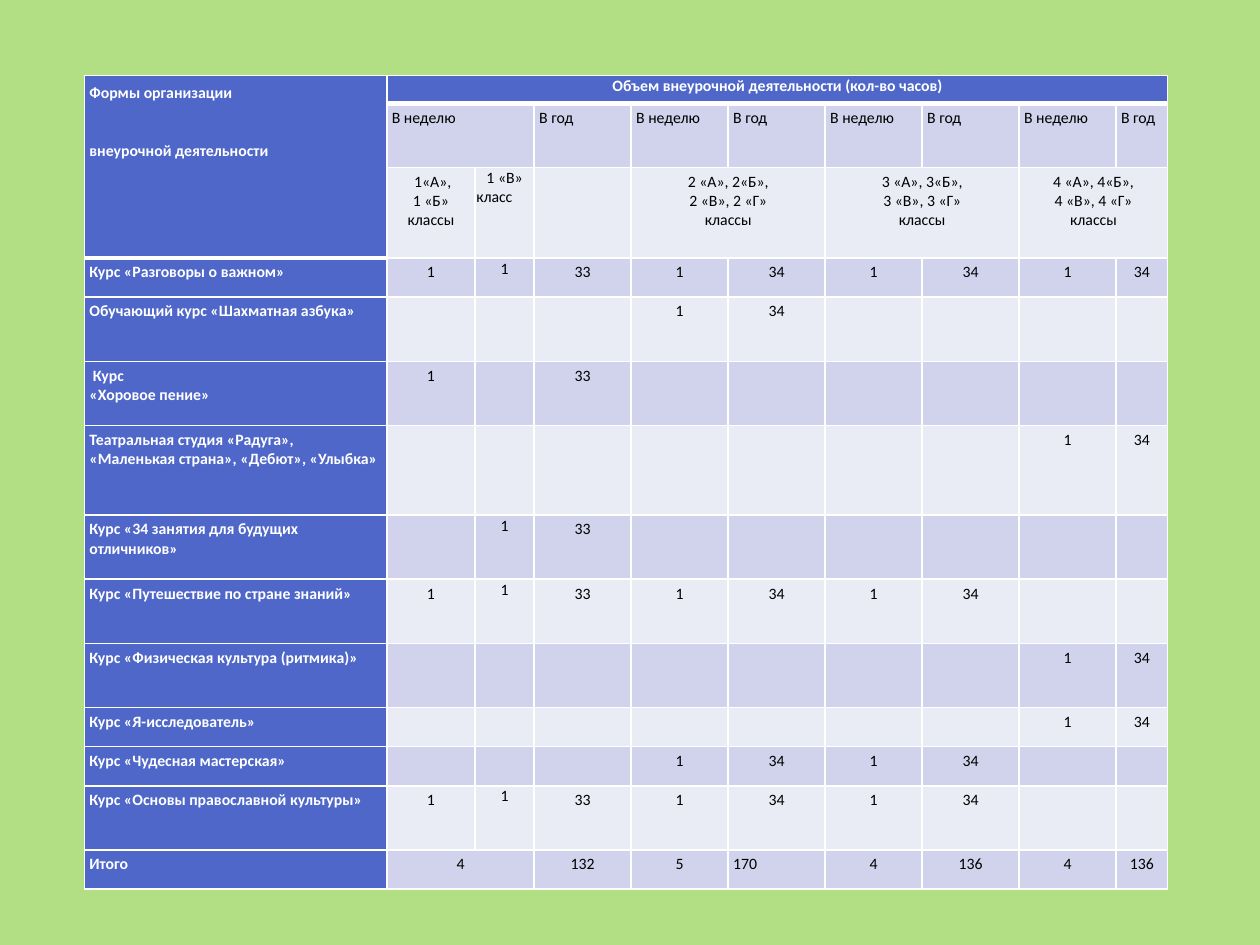
from lxml.etree import SubElement
from pptx import Presentation
from pptx.dml.color import RGBColor
from pptx.enum.text import MSO_ANCHOR, PP_ALIGN
from pptx.oxml.ns import qn
from pptx.util import Emu, Inches, Pt

COLORS = {
    "background": "92D050",
    "header": "4E67C8",
    "odd": "D0D3EB",
    "even": "E9EBF5",
    "white": "FFFFFF",
    "black": "000000",
}
COLUMN_WIDTHS = [2.4, 0.7, 0.47] + [0.77] * 6 + [0.41]
ROW_HEIGHTS = [0.22, 0.51, 0.71, 0.31, 0.51, 0.51, 0.71,
               0.51, 0.51, 0.51, 0.31, 0.31, 0.51, 0.31]
MERGES = [(0, 0, 2, 0), (0, 1, 0, 9), (1, 1, 1, 2), (13, 1, 13, 2)]
MERGES += [(2, column, 2, column + 1) for column in (4, 6, 8)]
ROWS = [
    "Формы организации\nвнеурочной деятельности|Объем внеурочной деятельности (кол-во часов)||||||||",
    "|В неделю||В год|В неделю|В год|В неделю|В год|В неделю|В год",
    "| 1«А»,\n1 «Б» классы|1 «В»\nкласс||2 «А», 2«Б»,\n2 «В», 2 «Г»\nклассы||"
    "3 «А», 3«Б»,\n3 «В», 3 «Г»\nклассы||4 «А», 4«Б»,\n4 «В», 4 «Г»\nклассы|",
    "Курс «Разговоры о важном»|1|1|33|1|34|1|34|1|34",
    "Обучающий курс «Шахматная азбука»||||1|34||||",
    " Курс\n«Хоровое пение»|1||33||||||",
    "Театральная студия «Радуга», «Маленькая страна», «Дебют», «Улыбка»||||||||1|34",
    "Курс «34 занятия для будущих отличников»||1|33||||||",
    "Курс «Путешествие по стране знаний»|1|1|33|1|34|1|34||",
    "Курс «Физическая культура (ритмика)»||||||||1|34",
    "Курс «Я-исследователь»||||||||1|34",
    "Курс «Чудесная мастерская»||||1|34|1|34||",
    "Курс «Основы православной культуры»|1|1|33|1|34|1|34||",
    "Итого|4||132|5|170|4|136|4|136",
]


class SlideBuilder:
    """Holds the style and the current slide, and draws each kind of element."""

    font_name = "Calibri"
    font_size = 9
    header_spacing = 12.8
    paragraph_gap = 7.5

    def __init__(self, presentation):
        self.width = presentation.slide_width
        self.height = presentation.slide_height
        self.slide = presentation.slides.add_slide(presentation.slide_layouts[6])

    def background(self, color, opacity):
        fill = self.slide.background.fill
        fill.solid()
        fill.fore_color.rgb = RGBColor.from_string(COLORS[color])
        color_element = self.slide._element.find(".//" + qn("a:srgbClr"))
        SubElement(color_element, qn("a:alpha"), val=str(opacity * 1000))

    def table(self, left, top, widths, heights, rows, merges):
        frame = self.slide.shapes.add_table(
            len(heights), len(widths), Emu(int(left * self.width)), Emu(int(top * self.height)),
            Inches(sum(widths)), Inches(sum(heights)))
        table = frame.table
        table.first_row = table.horz_banding = False
        for column, width in zip(table.columns, widths):
            column.width = Inches(width)
        for row, height in zip(table.rows, heights):
            row.height = Inches(height)
        for first_row, first_column, last_row, last_column in merges:
            table.cell(first_row, first_column).merge(table.cell(last_row, last_column))
        for row_index, row in enumerate(rows):
            for column_index, text in enumerate(row.split("|")):
                self.cell(table.cell(row_index, column_index), row_index, column_index, text)

    def cell(self, cell, row, column, text):
        is_header = row == 0 or column == 0
        thick_bottom = row == 0 or (row == 2 and column == 0)
        thick_top = (row == 1 and column > 0) or (row == 3 and column == 0)
        self.borders(cell, 3 if thick_top else 1, 3 if thick_bottom else 1)
        color = "header" if is_header else ("odd" if row % 2 else "even")
        cell.fill.solid()
        cell.fill.fore_color.rgb = RGBColor.from_string(COLORS[color])
        is_tight = (row == 0 and column > 0) or (column == 2 and text)
        margin = Inches(0.01 if is_tight else 0.04)
        cell.margin_left = cell.margin_right = cell.margin_top = cell.margin_bottom = margin
        cell.vertical_anchor = MSO_ANCHOR.TOP
        for index, line in enumerate(text.split("\n")):
            frame = cell.text_frame
            paragraph = frame.add_paragraph() if index else frame.paragraphs[0]
            is_left = column == 0 or row == 1 or line in ("класс", "170")
            paragraph.alignment = PP_ALIGN.LEFT if is_left else PP_ALIGN.CENTER
            if row == 0 and column == 0:
                paragraph.line_spacing = Pt(self.header_spacing)
                paragraph.space_before = Pt(self.header_spacing * index)
                paragraph.space_after = Pt(self.paragraph_gap * (1 - index))
            elif row != 2 and (column > 0 or row == len(ROWS) - 1):
                paragraph.space_after = Pt(self.paragraph_gap)
            self.run(paragraph, line, is_header)

    def run(self, paragraph, text, is_header):
        if not text:
            SubElement(paragraph._p, qn("a:endParaRPr"), sz=str(self.font_size * 100))
            return
        run = paragraph.add_run()
        run.text = text
        run.font.name = self.font_name
        run.font.size = Pt(self.font_size)
        run.font.bold = is_header
        run.font.color.rgb = RGBColor.from_string(COLORS["white" if is_header else "black"])

    def borders(self, cell, top, bottom):
        properties = cell._tc.get_or_add_tcPr()
        for side, width in (("L", 1), ("R", 1), ("T", top), ("B", bottom)):
            line = SubElement(properties, qn("a:ln" + side), w=str(Pt(width)))
            fill = SubElement(line, qn("a:solidFill"))
            SubElement(fill, qn("a:srgbClr"), val=COLORS["white"])


def main():
    presentation = Presentation()
    presentation.slide_width = Inches(10)
    presentation.slide_height = Inches(7.5)
    builder = SlideBuilder(presentation)
    builder.background("background", 70)
    builder.table(0.067, 0.08, COLUMN_WIDTHS, ROW_HEIGHTS, ROWS, MERGES)
    presentation.save("out.pptx")


if __name__ == "__main__":
    main()
